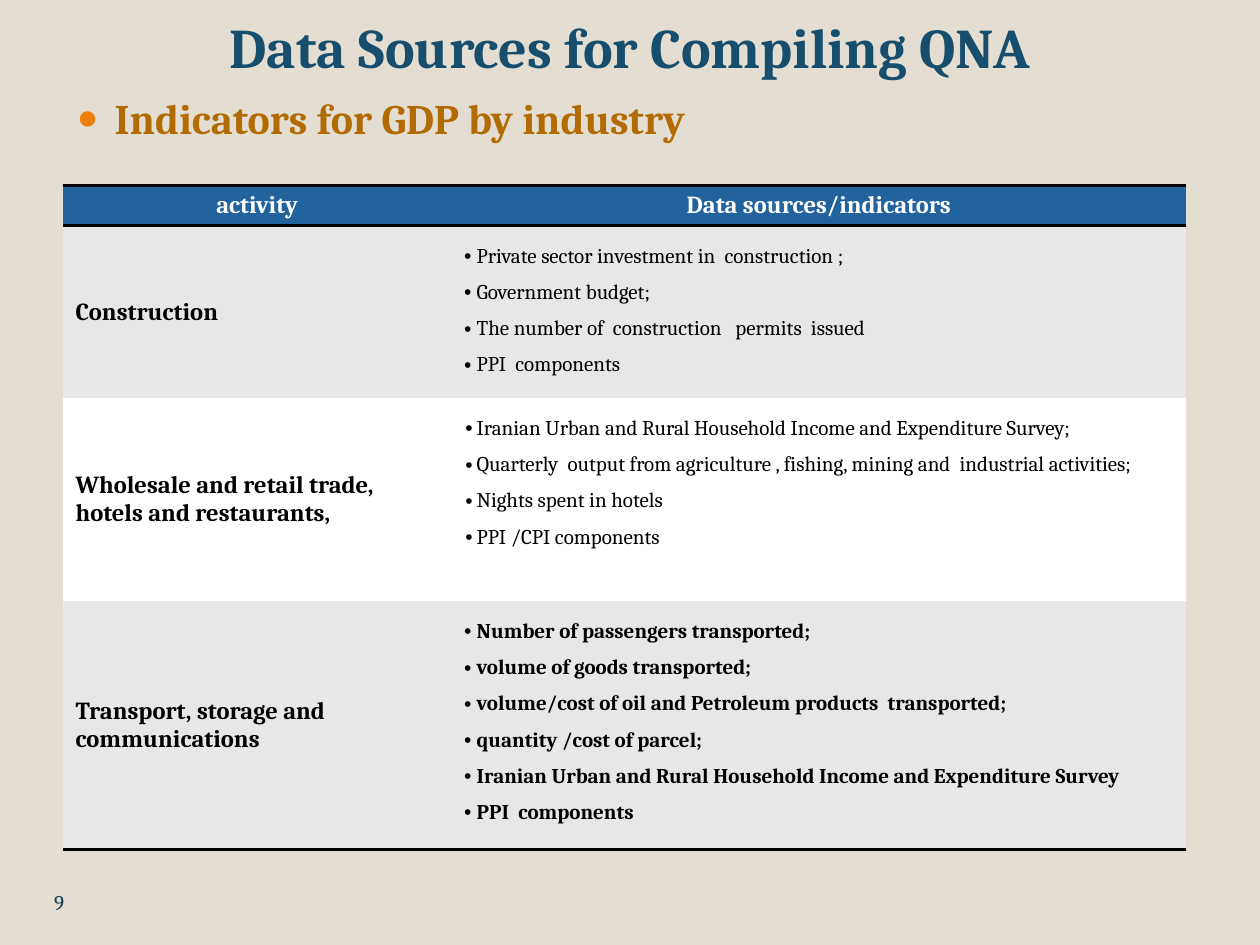
from lxml.etree import SubElement
from pptx import Presentation
from pptx.dml.color import RGBColor
from pptx.enum.text import MSO_ANCHOR as ANCHOR, MSO_AUTO_SIZE as AUTO, PP_ALIGN as ALIGN
from pptx.oxml import parse_xml
from pptx.oxml.ns import nsdecls, qn
from pptx.util import Pt

FONT = "Cambria"
BLACK, WHITE, GREY, BLUE = "000000", "FFFFFF", "E7E7E7", "22639E"
NO_STYLE = "{2D5ABB26-0587-4C30-8999-92F81FD0307C}"
COLUMNS = [222, 420]
ROW_HEIGHTS = [22.5, 98.5, 116, 142]
HEADERS = ["activity", "Data sources/indicators"]
# activity, fill, bold indicators, hanging indent, indicators
ACTIVITIES = [
    ("Construction", GREY, False, 7.2, [
        "Private sector investment in  construction ;",
        "Government budget;",
        "The number of  construction   permits  issued",
        "PPI  components",
    ]),
    ("Wholesale and retail trade, hotels and restaurants,", WHITE, False, 6.5, [
        "Iranian Urban and Rural Household Income and Expenditure Survey;",
        "Quarterly  output from agriculture , fishing, mining and  industrial activities;",
        "Nights spent in hotels",
        "PPI /CPI components",
    ]),
    ("Transport, storage and communications", GREY, True, 7.2, [
        "Number of passengers transported;",
        "volume of goods transported;",
        "volume/cost of oil and Petroleum products  transported;",
        "quantity /cost of parcel;",
        "Iranian Urban and Rural Household Income and Expenditure Survey",
        "PPI  components",
    ]),
]


def rgb(color):
    return RGBColor.from_string(color)


def add_run(p, text, size, color, bold=False):
    r = p.add_run()
    r.text = text
    r.font.name, r.font.size, r.font.bold = FONT, Pt(size), bold
    r.font.color.rgb = rgb(color)


def set_bullet(p, char, left, hang, color=None, percent=100):
    pPr = p._p.get_or_add_pPr()
    pPr.set("marL", str(Pt(left)))
    pPr.set("indent", str(-Pt(hang)))
    if color:
        SubElement(SubElement(pPr, qn("a:buClr")), qn("a:srgbClr"), val=color)
    SubElement(pPr, qn("a:buSzPct"), val=str(percent * 1000))
    SubElement(pPr, qn("a:buFont"), typeface="Arial")
    SubElement(pPr, qn("a:buChar"), char=char)


def place(sp, left, top, width, height, anchor=ANCHOR.TOP):
    """Set a shape's box and return its first paragraph."""
    sp.left, sp.top, sp.width, sp.height = map(Pt, (left, top, width, height))
    tf = sp.text_frame
    tf.word_wrap, tf.auto_size, tf.vertical_anchor = True, AUTO.NONE, anchor
    return tf.paragraphs[0]


def fill_cell(cell, color, edges=""):
    """Fill a cell and rule the given edges (T, B) in black."""
    cell.fill.solid()
    cell.fill.fore_color.rgb = rgb(color)
    tcPr = cell._tc.get_or_add_tcPr()
    for i, edge in enumerate(edges):
        tcPr.insert(i, parse_xml(
            f'<a:ln{edge} {nsdecls("a")} w="{Pt(2)}"><a:solidFill>'
            f'<a:srgbClr val="{BLACK}"/></a:solidFill></a:ln{edge}>'))


def add_indicators(cell, items, bold, hang):
    tf = cell.text_frame
    for i, item in enumerate(items):
        p = tf.add_paragraph() if i else tf.paragraphs[0]
        p.line_spacing = 1.5
        set_bullet(p, "•", 7.2, hang)
        add_run(p, item, 12, BLACK, bold)


def add_activity_table(s):
    frame = s.shapes.add_table(len(ROW_HEIGHTS), len(COLUMNS), Pt(36), Pt(105.8),
                               Pt(sum(COLUMNS)), Pt(sum(ROW_HEIGHTS)))
    table = frame.table
    table.horz_banding = False
    table._tbl.tblPr.find(qn("a:tableStyleId")).text = NO_STYLE
    for column, width in zip(table.columns, COLUMNS):
        column.width = Pt(width)
    for row, height in zip(table.rows, ROW_HEIGHTS):
        row.height = Pt(height)

    for i, header in enumerate(HEADERS):
        cell = table.cell(0, i)
        fill_cell(cell, BLUE, "TB")
        p = cell.text_frame.paragraphs[0]
        p.alignment = ALIGN.CENTER
        add_run(p, header, 14, WHITE, True)

    for i, (activity, color, bold, hang, items) in enumerate(ACTIVITIES, 1):
        name, sources = table.cell(i, 0), table.cell(i, 1)
        for cell in (name, sources):
            fill_cell(cell, color, "B" if i == len(ACTIVITIES) else "")
        name.vertical_anchor = ANCHOR.MIDDLE
        add_run(name.text_frame.paragraphs[0], activity, 14, BLACK, True)
        add_indicators(sources, items, bold, hang)


def main():
    prs = Presentation()
    prs.slide_width, prs.slide_height = Pt(720), Pt(540)
    s = prs.slides.add_slide(prs.slide_layouts[1])
    s.background.fill.solid()
    s.background.fill.fore_color.rgb = rgb("E3DED1")

    p = place(s.shapes.title, 36, 21.6, 648, 27.4, ANCHOR.BOTTOM)
    p.alignment = ALIGN.CENTER
    add_run(p, "Data Sources for Compiling QNA", 32, "184E6D", True)

    p = place(s.placeholders[1], 36.7, 49, 648, 33.8)
    set_bullet(p, "●", 21.6, 21.6, "F07F09", 85)
    add_run(p, "Indicators for GDP by industry", 24, "B26B02", True)

    add_activity_table(s)

    p = place(s.shapes.add_textbox(0, 0, 0, 0), 23.8, 504.7, 282, 28.8)
    add_run(p, "9", 12, "14425D")
    prs.save("out.pptx")


if __name__ == "__main__":
    main()
